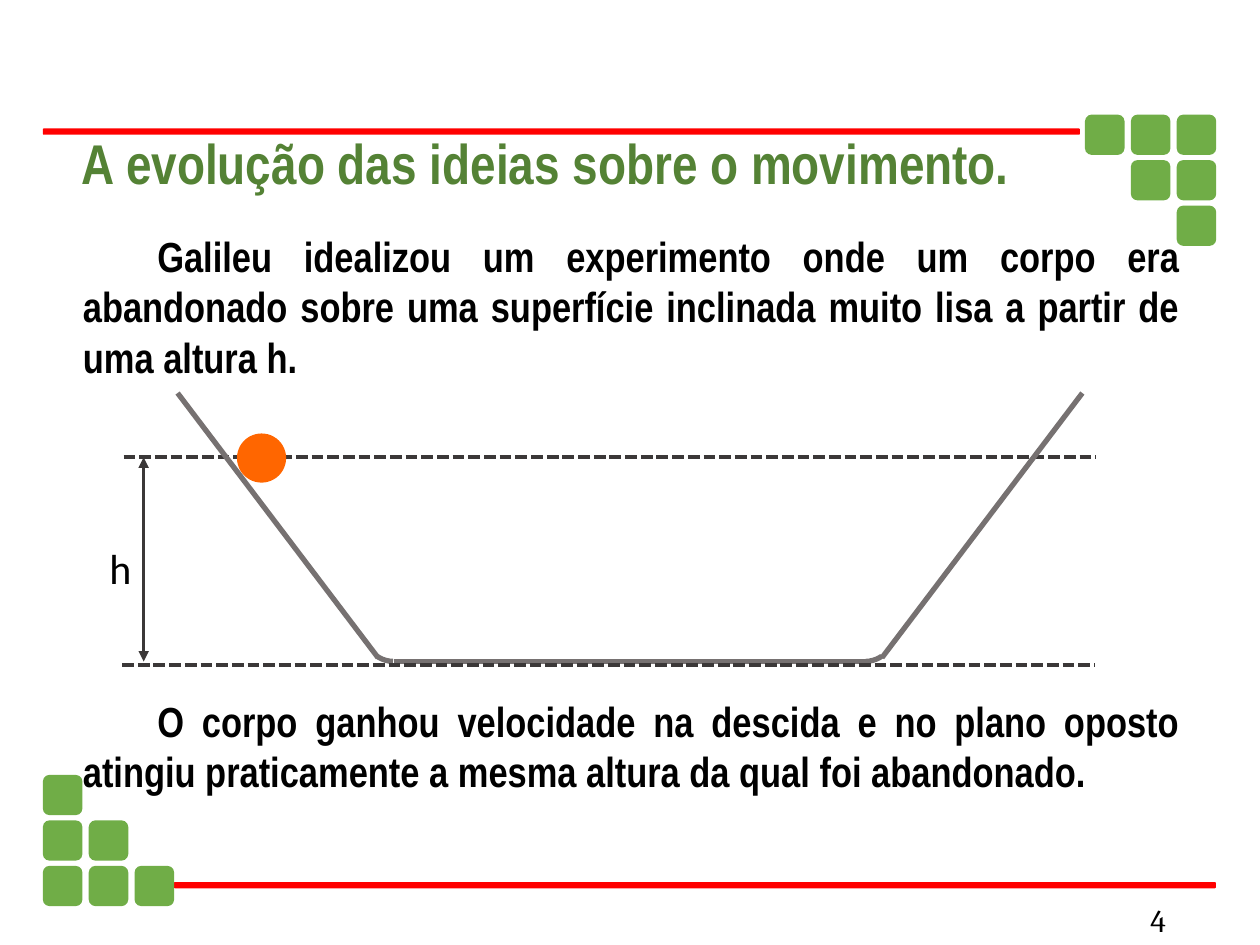
from lxml import etree
from pptx import Presentation
from pptx.dml.color import RGBColor
from pptx.enum.dml import MSO_LINE
from pptx.enum.shapes import MSO_CONNECTOR, MSO_SHAPE
from pptx.enum.text import MSO_ANCHOR, PP_ALIGN
from pptx.oxml.ns import qn
from pptx.util import Pt

ROUND, OVAL, ARC = MSO_SHAPE.ROUNDED_RECTANGLE, MSO_SHAPE.OVAL, MSO_SHAPE.ARC
STRAIGHT, DASH = MSO_CONNECTOR.STRAIGHT, MSO_LINE.SQUARE_DOT
TOP, MIDDLE = MSO_ANCHOR.TOP, MSO_ANCHOR.MIDDLE
LEFT, JUSTIFY = PP_ALIGN.LEFT, PP_ALIGN.JUSTIFY

THEME = {
    "bar": "FF0000", "tile": "70AD47", "ball": "FF6600",
    "track": "767171", "guide": "3B3838",
    "title": ("Arial Narrow", 32, True, "548235"),
    "body": ("Arial Narrow", 24, True, "000000"),
    "label": ("Calibri", 24, False, "000000"),
    "number": ("Cambria", 18, False, "000000"),
}

# Content: text, style, box, alignment, first-line indent, anchor, wrap
TEXTS = [
    ("h", "label", (55.4, 306.7, 28.1, 36), LEFT, 0, TOP, False),
    ("Galileu idealizou um experimento onde um corpo era abandonado sobre "
     "uma superfície inclinada muito lisa a partir de uma altura h.",
     "body", (40.3, 128.2, 640.8, 94.3), JUSTIFY, 42.5, TOP, True),
    ("O corpo ganhou velocidade na descida e no plano oposto atingiu "
     "praticamente a mesma altura da qual foi abandonado.",
     "body", (40.3, 393.8, 640.8, 65.5), JUSTIFY, 42.5, TOP, True),
    ("A evolução das ideias sobre o movimento.",
     "title", (39.6, 69.8, 553, 46.1), LEFT, 0, TOP, True),
    ("4", "number", (650.2, 511.2, 43.9, 28.8), LEFT, 0, MIDDLE, True),
]
BARS = [(24.5, 73.4, 592.6, 3.6), (99.4, 504, 595.4, 3.6)]

# Stair corners: left, top, tiles as (column, row)
STAIRS = [
    (24.5, 442.8, [(c, r) for r in range(3) for c in range(r + 1)]),
    (620, 65.5, [(c, r) for r in range(3) for c in range(r, 3)]),
]
TILE_W, TILE_H, STEP_X, STEP_Y = 22.6, 23, 26.2, 26

# Experiment: start, end, style, width, dashed, arrows
HIGH, LOW = 261.4, 378
GUIDES = [
    ((70.6, HIGH), (626.4, HIGH), 2.25, True, False),
    ((69.8, 380.2), (625.7, 380.2), 2.25, True, False),
    ((82.1, HIGH), (82.1, LOW), 1.5, False, True),
]
TRACK = [
    ((101.5, 224.6), (216, 375.8)),
    ((225.4, LOW), (496.8, LOW)),
    ((618.5, 224.6), (504, 375.8)),
]
BEND = 33.8
BENDS = [(208.1, 91.4, 124.5), (477.4, 55.5, 88.6)]  # left, start, end degrees
BALL = (135.4, 247.7, 28.1, 28.1)

deck = Presentation()
deck.slide_width, deck.slide_height = Pt(720), Pt(540)
slide = deck.slides.add_slide(deck.slide_layouts[6])
shapes = slide.shapes


def rgb(name):
    return RGBColor.from_string(THEME[name])


def fill(kind, box, color):
    part = shapes.add_shape(kind, *map(Pt, box))
    part.shadow.inherit = False
    part.fill.solid()
    part.fill.fore_color.rgb = rgb(color)
    part.line.fill.background()


def line(start, end, color, width, dashed=False, arrows=False):
    part = shapes.add_connector(STRAIGHT, *map(Pt, start + end))
    part.line.color.rgb = rgb(color)
    part.line.width = Pt(width)
    if dashed:
        part.line.dash_style = DASH
    if arrows:
        for tag in ("a:headEnd", "a:tailEnd"):
            etree.SubElement(part.line._get_or_add_ln(), qn(tag), type="triangle")
    etree.SubElement(part._element.spPr, qn("a:effectLst"))


def bend(left, start, end):
    part = shapes.add_shape(ARC, Pt(left), Pt(LOW - BEND), Pt(BEND), Pt(BEND))
    part.shadow.inherit = False
    part.fill.background()
    part.line.color.rgb = rgb("track")
    part.line.width = Pt(3)
    # One adjustment unit is 100000 sixty-thousandths of a degree
    part.adjustments[0], part.adjustments[1] = start * 0.6, end * 0.6


def write(text, style, box, align, indent, anchor, wrap):
    frame = shapes.add_textbox(*map(Pt, box)).text_frame
    frame.word_wrap, frame.vertical_anchor = wrap, anchor
    para = frame.paragraphs[0]
    para.alignment = align
    if indent:
        para._p.get_or_add_pPr().set("indent", str(Pt(indent)))
    run = para.add_run()
    run.text = text
    face, size, bold, color = THEME[style]
    run.font.name, run.font.size, run.font.bold = face, Pt(size), bold
    run.font.color.rgb = RGBColor.from_string(color)


# Frame: red bars and green stairs
for bar in BARS:
    fill(ROUND, bar, "bar")
for left, top, tiles in STAIRS:
    for col, row in tiles:
        fill(ROUND, (left + col * STEP_X, top + row * STEP_Y, TILE_W, TILE_H), "tile")

# Experiment: upper guide, track, ball, then lower guide and height
upper, *others = GUIDES
line(*upper[:2], "guide", *upper[2:])
for start, end in TRACK:
    line(start, end, "track", 3)
for item in BENDS:
    bend(*item)
fill(OVAL, BALL, "ball")
for start, end, *look in others:
    line(start, end, "guide", *look)

# Words
for item in TEXTS:
    write(*item)

deck.save("out.pptx")
